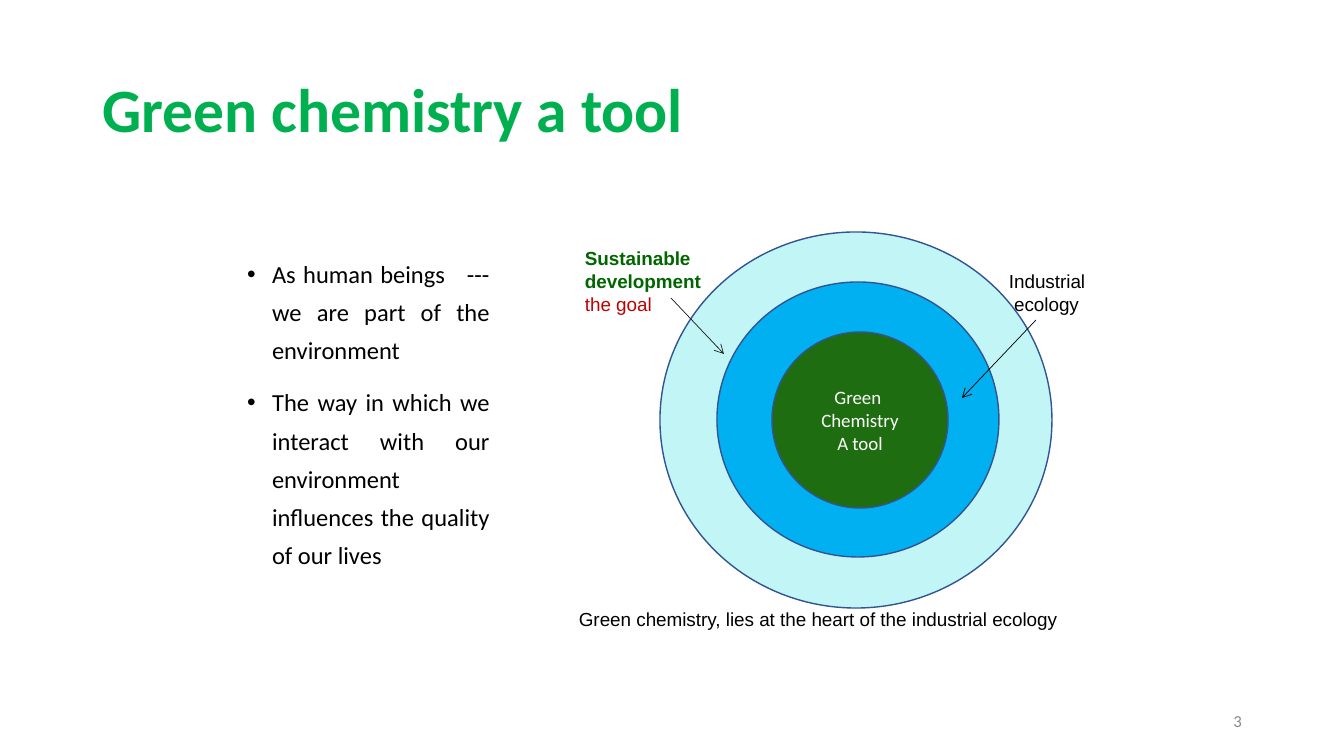
from dataclasses import dataclass

from lxml import etree
from pptx import Presentation
from pptx.dml.color import RGBColor
from pptx.enum.shapes import MSO_CONNECTOR, MSO_SHAPE
from pptx.enum.text import MSO_ANCHOR, MSO_AUTO_SIZE, PP_ALIGN
from pptx.oxml.ns import qn
from pptx.util import Emu, Pt

CIRCLE = MSO_SHAPE.FLOWCHART_CONNECTOR
STRAIGHT = MSO_CONNECTOR.STRAIGHT
TOP, MIDDLE = MSO_ANCHOR.TOP, MSO_ANCHOR.MIDDLE
LEFT, CENTER, RIGHT, JUSTIFY = PP_ALIGN.LEFT, PP_ALIGN.CENTER, PP_ALIGN.RIGHT, PP_ALIGN.JUSTIFY
NO_FIT = MSO_AUTO_SIZE.NONE
EMU_PER_PX = 914400 / 100.8


@dataclass(frozen=True)
class Theme:
    heading_font: str = "Calibri"
    label_font: str = "Arial"
    title_size: float = 44
    body_size: float = 17.5
    label_size: float = 13.5
    number_size: float = 12
    title: str = "00B050"
    ink: str = "000000"
    white: str = "FFFFFF"
    muted: str = "898989"
    goal: str = "006600"
    accent: str = "C00000"
    outline: str = "325491"
    goal_arrow: str = "1A1A1A"
    outer: str = "C2F5F6"
    middle: str = "00B0F0"
    core: str = "1E6D11"


THEME = Theme()


def px(length):
    return Emu(round(length * EMU_PER_PX))


def inside(box, left, top, width, height):
    return box[0] + left, box[1] + top, width, height


def add_text(para, text, font=THEME.label_font, size=THEME.label_size,
             color=THEME.ink, bold=False):
    for index, line in enumerate(text.split("\n")):
        if index:
            para.add_line_break()
        if line:
            span = para.add_run()
            span.text = line
            span.font.name = font
            span.font.size = Pt(size)
            span.font.bold = bold
            span.font.color.rgb = RGBColor.from_string(color)


def prepare_frame(shape, anchor=TOP):
    frame = shape.text_frame
    frame.word_wrap = True
    frame.auto_size = NO_FIT
    frame.vertical_anchor = anchor
    return frame


def add_label(page, box, spans, align=LEFT, anchor=TOP):
    label = page.shapes.add_textbox(*map(px, box))
    para = prepare_frame(label, anchor).paragraphs[0]
    para.alignment = align
    for text, style in spans:
        add_text(para, text, **style)


def add_circle(page, box, fill):
    circle = page.shapes.add_shape(CIRCLE, *map(px, box))
    circle.shadow.inherit = False
    circle.fill.solid()
    circle.fill.fore_color.rgb = RGBColor.from_string(fill)
    circle.line.color.rgb = RGBColor.from_string(THEME.outline)
    circle.line.width = Pt(1)
    return circle


def add_arrow(page, box, start, end, color):
    points = [px(box[axis] + point[axis]) for point in (start, end) for axis in (0, 1)]
    arrow = page.shapes.add_connector(STRAIGHT, *points)
    arrow.line.color.rgb = RGBColor.from_string(color)
    arrow.line.width = Pt(0.5)
    etree.SubElement(arrow.line._get_or_add_ln(), qn("a:tailEnd"), type="arrow")
    etree.SubElement(arrow._element.spPr, qn("a:effectLst"))


def place(shape, box):
    shape.left, shape.top, shape.width, shape.height = map(px, box)


def fill_title(page, box, text):
    title = page.shapes.title
    place(title, box)
    para = prepare_frame(title, MIDDLE).paragraphs[0]
    para.alignment = LEFT
    para.line_spacing = 0.9
    add_text(para, text, THEME.heading_font, THEME.title_size, THEME.title, bold=True)


def fill_body(page, box, items):
    body = page.placeholders[1]
    place(body, box)
    frame = prepare_frame(body)
    for index, item in enumerate(items):
        para = frame.add_paragraph() if index else frame.paragraphs[0]
        para.alignment = JUSTIFY
        para.line_spacing = 1.3
        para.space_before = Pt(10)
        properties = para._p.get_or_add_pPr()
        properties.set("marL", str(px(25)))
        properties.set("indent", str(-px(25)))
        etree.SubElement(properties, qn("a:buFont"), typeface="Arial")
        etree.SubElement(properties, qn("a:buChar"), char="•")
        add_text(para, item, THEME.heading_font, THEME.body_size)


def draw_rings(page, box):
    add_circle(page, inside(box, 85, 0, 392, 376), THEME.outer)
    add_circle(page, inside(box, 142, 50, 282, 275), THEME.middle)
    core = add_circle(page, inside(box, 197, 100, 176, 176), THEME.core)
    frame = prepare_frame(core, MIDDLE)
    for index, line in enumerate(("Green ", "Chemistry", "A tool")):
        para = frame.add_paragraph() if index else frame.paragraphs[0]
        para.alignment = CENTER
        add_text(para, line, THEME.heading_font, color=THEME.white)

    add_label(page, inside(box, 424, 33, 109, 56), [("Industrial\n ecology", {})])
    add_label(page, inside(box, 0, 10, 143, 79), [
        ("Sustainable\ndevelopment\n", {"color": THEME.goal, "bold": True}),
        ("the goal", {"color": THEME.accent}),
    ])
    add_arrow(page, box, (96, 66), (149, 122), THEME.goal_arrow)
    add_arrow(page, box, (461, 88), (387, 166), THEME.ink)
    add_label(page, inside(box, -6, 371, 539, 33),
              [("Green chemistry, lies at the heart of the industrial ecology", {})])


def add_page_number(page, box, number):
    style = {"font": THEME.heading_font, "size": THEME.number_size, "color": THEME.muted}
    add_label(page, box, [(number, style)], RIGHT, MIDDLE)


def main():
    deck = Presentation()
    deck.slide_width, deck.slide_height = px(1344), px(756)
    page = deck.slides.add_slide(deck.slide_layouts[1])
    fill_title(page, (92, 40, 1159, 146), "Green chemistry a tool")
    fill_body(page, (237, 245, 263, 360), [
        "As human beings   --- we are part of the environment",
        "The way in which we interact with our environment influences the quality of our lives",
    ])
    draw_rings(page, (575, 232, 533, 404))
    add_page_number(page, (950, 701, 302, 40), "3")
    deck.save("out.pptx")


if __name__ == "__main__":
    main()
